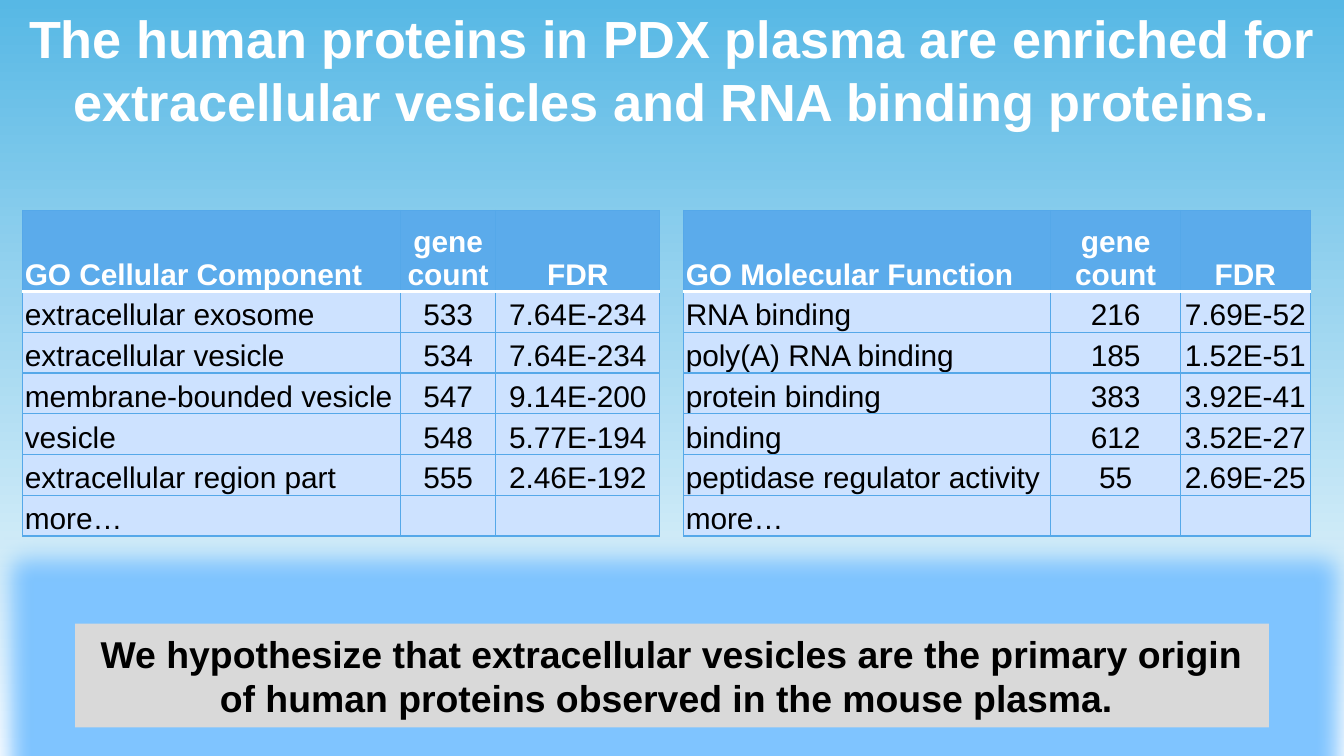
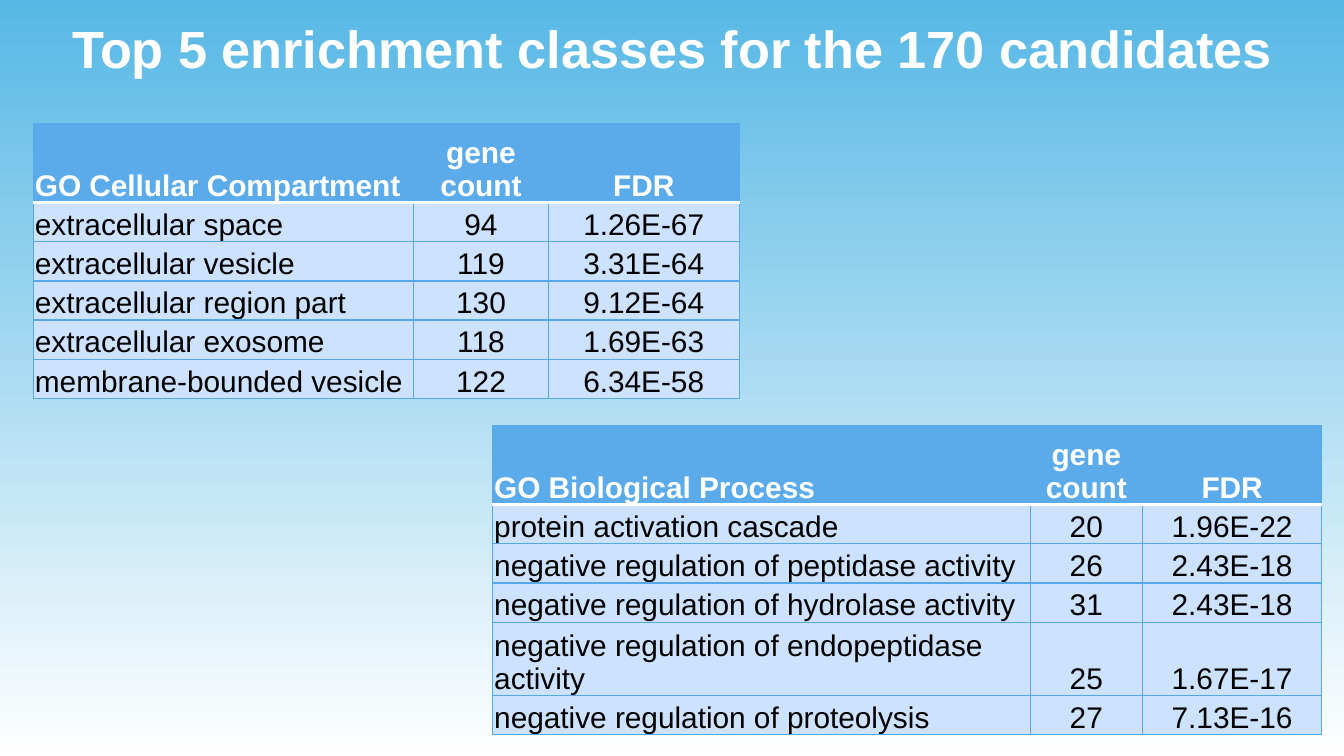
from lxml import etree
from pptx import Presentation
from pptx import util as u
from pptx.dml import color
from pptx.enum import shapes, text
from pptx.oxml import ns

FONT = "Arial"
SKY, WHITE, BLACK = "57B8E5", "FFFFFF", "000000"
HEADER, BODY, GRID = "5BABEB", "CDE2FF", "55A8E9"
GREY, GLOW = "D9D9D9", "7FC4FF"

CELLULAR_COMPONENT = [
    ("GO Cellular Component", "gene count", "FDR"),
    ("extracellular exosome", "533", "7.64E-234"),
    ("extracellular vesicle", "534", "7.64E-234"),
    ("membrane-bounded vesicle", "547", "9.14E-200"),
    ("vesicle", "548", "5.77E-194"),
    ("extracellular region part", "555", "2.46E-192"),
    ("more…", "", ""),
]
MOLECULAR_FUNCTION = [
    ("GO Molecular Function", "gene count", "FDR"),
    ("RNA binding", "216", "7.69E-52"),
    ("poly(A) RNA binding", "185", "1.52E-51"),
    ("protein binding", "383", "3.92E-41"),
    ("binding", "612", "3.52E-27"),
    ("peptidase regulator activity", "55", "2.69E-25"),
    ("more…", "", ""),
]
CELLULAR_COMPARTMENT = [
    ("GO Cellular Compartment", "gene count", "FDR"),
    ("extracellular space", "94", "1.26E-67"),
    ("extracellular vesicle", "119", "3.31E-64"),
    ("extracellular region part", "130", "9.12E-64"),
    ("extracellular exosome", "118", "1.69E-63"),
    ("membrane-bounded vesicle", "122", "6.34E-58"),
]
BIOLOGICAL_PROCESS = [
    ("GO Biological Process", "gene count", "FDR"),
    ("protein activation cascade", "20", "1.96E-22"),
    ("negative regulation of peptidase activity", "26", "2.43E-18"),
    ("negative regulation of hydrolase activity", "31", "2.43E-18"),
    ("negative regulation of endopeptidase activity", "25", "1.67E-17"),
    ("negative regulation of proteolysis", "27", "7.13E-16"),
]


def rgb(value):
    return color.RGBColor.from_string(value)


def write(frame, words, size, ink, bold=True, centred=True):
    paragraph = frame.paragraphs[0]
    paragraph.alignment = text.PP_ALIGN.CENTER if centred else text.PP_ALIGN.LEFT
    if not words:
        end = etree.SubElement(paragraph._p, ns.qn("a:endParaRPr"))
        end.set("sz", str(size * 100))
        return
    run = paragraph.add_run()
    run.text = words
    run.font.name = FONT
    run.font.size = u.Pt(size)
    run.font.bold = bold
    run.font.color.rgb = rgb(ink)


def solid(parent, value, tag="a:srgbClr"):
    fill = etree.SubElement(parent, ns.qn("a:solidFill"))
    etree.SubElement(fill, ns.qn(tag)).set("val", value)


def set_borders(cell, top, bottom):
    """Draw the four edges; top and bottom are (colour, points)."""
    properties = cell._tc.get_or_add_tcPr()
    thin = (GRID, 0.75)
    edges = {"L": thin, "R": thin, "T": top, "B": bottom}
    for place, (side, (ink, points)) in enumerate(edges.items()):
        line = etree.Element(ns.qn("a:ln" + side), w=str(u.Pt(points)))
        solid(line, ink)
        properties.insert(place, line)


def add_enrichment_table(slide, left, top, rows, widths, header_height,
                         row_height, inset, tall_rows=None):
    """Place a table; tall_rows maps a row number to its own height."""
    heights = [header_height] + [row_height] * (len(rows) - 1)
    for number, height in (tall_rows or {}).items():
        heights[number] = height
    table = slide.shapes.add_table(
        len(rows), len(widths), u.Cm(left), u.Cm(top),
        u.Cm(sum(widths)), u.Cm(sum(heights))).table
    for column, width in zip(table.columns, widths):
        column.width = u.Cm(width)
    thin, rule = (GRID, 0.75), (WHITE, 2)
    for r, row in enumerate(rows):
        table.rows[r].height = u.Cm(heights[r])
        is_header = r == 0
        for c, words in enumerate(row):
            cell = table.cell(r, c)
            cell.vertical_anchor = text.MSO_ANCHOR.BOTTOM
            cell.margin_left = cell.margin_right = cell.margin_top = u.Cm(inset)
            cell.margin_bottom = 0
            cell.fill.solid()
            cell.fill.fore_color.rgb = rgb(HEADER if is_header else BODY)
            set_borders(cell, rule if r == 1 else thin,
                        rule if is_header else thin)
            write(cell.text_frame, words, 16, WHITE if is_header else BLACK,
                  bold=is_header, centred=c > 0)


def add_title(slide, words, left, top, width, height):
    title = slide.shapes.add_textbox(
        u.Cm(left), u.Cm(top), u.Cm(width), u.Cm(height)).text_frame
    title.word_wrap = True
    title.auto_size = text.MSO_AUTO_SIZE.SHAPE_TO_FIT_TEXT
    write(title, words, 28, WHITE)


def add_hypothesis(slide, left, top, width, height):
    """Place the grey conclusion box with its blue glow."""
    box = slide.shapes.add_shape(
        shapes.MSO_SHAPE.RECTANGLE,
        u.Cm(left), u.Cm(top), u.Cm(width), u.Cm(height))
    box.fill.solid()
    box.fill.fore_color.rgb = rgb(GREY)
    box.line.fill.background()
    box.shadow.inherit = False
    effects = box._element.spPr.find(ns.qn("a:effectLst"))
    glow = etree.SubElement(effects, ns.qn("a:glow"), rad=str(u.Cm(0.85)))
    etree.SubElement(glow, ns.qn("a:srgbClr")).set("val", GLOW)
    box.text_frame.word_wrap = True
    box.text_frame.auto_size = text.MSO_AUTO_SIZE.SHAPE_TO_FIT_TEXT
    write(box.text_frame,
          "We hypothesize that extracellular vesicles are the primary origin "
          "of human proteins observed in the mouse plasma. ", 20, BLACK)


def add_sky_slide(deck):
    slide = deck.slides.add_slide(deck.slide_layouts[6])
    sky = slide.background.fill
    sky.gradient()
    sky.gradient_angle = 270
    for stop, ink, position in zip(sky.gradient_stops, (SKY, WHITE), (0, 1)):
        stop.color.rgb = rgb(ink)
        stop.position = position
    return slide


def build_plasma_slide(deck):
    slide = add_sky_slide(deck)
    add_hypothesis(slide, 1.42, 11.79, 22.56, 1.96)
    sizes = {"header_height": 1.53, "row_height": 0.77, "inset": 0.04}
    add_enrichment_table(slide, 0.43, 3.98, CELLULAR_COMPONENT,
                         (7.14, 1.8, 3.1), **sizes)
    add_enrichment_table(slide, 12.92, 3.98, MOLECULAR_FUNCTION,
                         (6.94, 2.45, 2.45), **sizes)
    add_title(slide, "The human proteins in PDX plasma are enriched for "
              "extracellular vesicles and RNA binding proteins.",
              0.08, 0, 25.22, 2.64)


def build_candidates_slide(deck):
    slide = add_sky_slide(deck)
    add_title(slide, "Top 5 enrichment classes for the 170 candidates",
              0, 0.18, 25.4, 1.45)
    sizes = {"header_height": 1.49, "row_height": 0.74, "inset": 0.03}
    add_enrichment_table(slide, 0.63, 2.34, CELLULAR_COMPARTMENT,
                         (7.19, 2.54, 3.61), **sizes)
    add_enrichment_table(slide, 9.31, 8.05, BIOLOGICAL_PROCESS,
                         (10.16, 2.12, 3.39), tall_rows={4: 1.39}, **sizes)


def main():
    deck = Presentation()
    deck.slide_width, deck.slide_height = u.Cm(25.4), u.Cm(14.29)
    build_plasma_slide(deck)
    build_candidates_slide(deck)
    deck.save("out.pptx")


if __name__ == "__main__":
    main()
